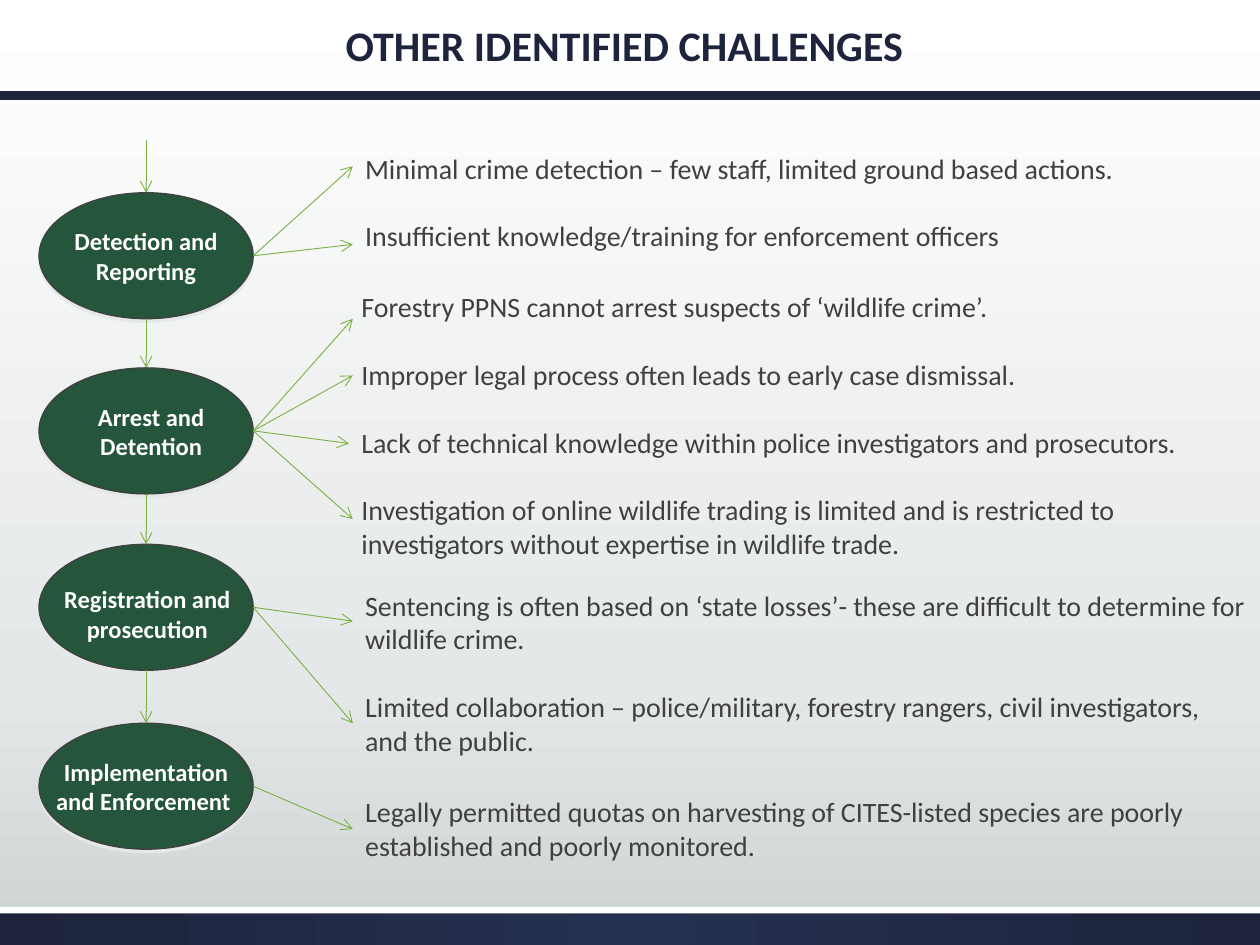
from lxml.etree import SubElement
from pptx import Presentation
from pptx.dml.color import RGBColor
from pptx.enum.shapes import MSO_CONNECTOR, MSO_SHAPE
from pptx.enum.text import MSO_ANCHOR, MSO_AUTO_SIZE, PP_ALIGN
from pptx.oxml import parse_xml
from pptx.oxml.ns import nsdecls, qn
from pptx.util import Inches, Pt

THEME = {
    "font": "Calibri",
    "navy": RGBColor(0x1D, 0x24, 0x3C),
    "gray": RGBColor(0x40, 0x40, 0x40),
    "white": RGBColor(0xFF, 0xFF, 0xFF),
    "green": RGBColor(0x25, 0x55, 0x3B),
    "lime": RGBColor(0x77, 0xB1, 0x42),
    "shade": "E5E8E8",
    "sky": [(0, "FFFFFF"), (72, "E5E8E8"), (100, "CDD2D2")],
    "base": [(0, "263050"), (100, "1D243C")],
    "title": 24, "body": 16, "step": 14,
}

deck = Presentation()
deck.slide_width, deck.slide_height = Inches(10), Inches(7.5)
COL, ROW = deck.slide_width / 100, deck.slide_height / 75
slide = deck.slides.add_slide(deck.slide_layouts[6])
shapes = slide.shapes


def write(box, lines, size, color, bold=False, align=PP_ALIGN.LEFT,
          anchor=MSO_ANCHOR.TOP, inset=None, gap=0):
    """Add a wrapped text box; box is in grid units, gap in points."""
    x, y, w, h = box
    frame = shapes.add_textbox(int(x * COL), int(y * ROW), int(w * COL), int(h * ROW)).text_frame
    frame.word_wrap = True
    frame.auto_size = MSO_AUTO_SIZE.NONE
    frame.vertical_anchor = anchor
    if inset is not None:
        frame.margin_left = frame.margin_right = inset
        frame.margin_top = frame.margin_bottom = inset
    for i, line in enumerate(lines):
        para = frame.paragraphs[0] if i == 0 else frame.add_paragraph()
        para.alignment = align
        if i:
            para.space_before = Pt(gap)
        run = para.add_run()
        run.text = line
        font = run.font
        font.name, font.size, font.bold = THEME["font"], Pt(size), bold
        font.color.rgb = color


def join(start, end, color, width, arrow=True):
    """Draw a straight line between two grid points."""
    (x1, y1), (x2, y2) = start, end
    line = shapes.add_connector(MSO_CONNECTOR.STRAIGHT, int(x1 * COL), int(y1 * ROW),
                                int(x2 * COL), int(y2 * ROW))
    line.line.color.rgb, line.line.width = color, Pt(width)
    if arrow:
        SubElement(line.line._get_or_add_ln(), qn("a:tailEnd"), type="arrow")
    SubElement(line.element.spPr, qn("a:effectLst"))


# Background and footer
slide.background.fill.gradient()
foot = shapes.add_shape(MSO_SHAPE.RECTANGLE, 0, int(72 * ROW), int(100 * COL), int(3 * ROW))
foot.fill.gradient()
strip = shapes.add_shape(MSO_SHAPE.RECTANGLE, 0, int(72 * ROW), int(100 * COL), int(0.5 * ROW))
strip.fill.solid()
strip.fill.fore_color.rgb = THEME["white"]
for bar in (foot, strip):
    bar.shadow.inherit = False
    bar.line.fill.background()

linear = '<a:lin ang="5400000" scaled="0"/>'
radial = '<a:path path="circle"><a:fillToRect l="50000" t="50000" r="50000" b="50000"/></a:path>'
for root, stops, way in ((slide.element.cSld.bg, THEME["sky"], linear),
                         (foot.element, THEME["base"], radial)):
    old = next(root.iter(qn("a:gradFill")))
    marks = "".join(f'<a:gs pos="{at * 1000}"><a:srgbClr val="{tint}"/></a:gs>' for at, tint in stops)
    new = parse_xml(f'<a:gradFill {nsdecls("a")} rotWithShape="1"><a:gsLst>{marks}</a:gsLst>{way}</a:gradFill>')
    old.getparent().replace(old, new)

# Title
join((0, 7.6), (100, 7.6), THEME["navy"], 5, arrow=False)
write((3.3, 1.5, 93.3, 4.5), ["OTHER IDENTIFIED CHALLENGES "], THEME["title"], THEME["navy"],
      bold=True, align=PP_ALIGN.CENTER, anchor=MSO_ANCHOR.BOTTOM)

# Each step: label, oval top, label offset, notes box, notes, arrow ends
LEFT, WIDE, TALL = 3.1, 17, 10
MID, EDGE = LEFT + WIDE / 2, LEFT + WIDE
STEPS = [
    ("Detection and Reporting", 15.3, (0.7, 0.4), (28, 11.5, 64.6, 11.8),
     ["Minimal crime detection – few staff, limited ground based actions.",
      "Insufficient knowledge/training for enforcement officers"],
     [(28, 13.2), (28, 19.4)]),
    ("Arrest and Detention", 29.2, (1.1, 0.4), (27.7, 22.5, 71.1, 25.2),
     ["Forestry PPNS cannot arrest suspects of ‘wildlife crime’.",
      "Improper legal process often leads to early case dismissal.",
      "Lack of technical knowledge within police investigators and prosecutors.",
      "Investigation of online wildlife trading is limited and is restricted to "
      "investigators without expertise in wildlife trade."],
     [(28, 25.3), (28, 29.8), (27.7, 35.2), (28, 41.2)]),
    ("Registration and prosecution", 43.2, (0.8, 0.9), (28, 46.2, 72, 14.5),
     ["Sentencing is often based on ‘state losses’- these are difficult to determine "
      "for wildlife crime.",
      "Limited collaboration – police/military, forestry rangers, civil investigators, "
      "and the public."],
     [(28, 49.3), (28, 57.4)]),
    ("Implementation and Enforcement ", 57.4, (0.7, 0.4), (28, 62.6, 70.9, 6.4),
     ["Legally permitted quotas on harvesting of CITES-listed species are poorly "
      "established and poorly monitored."],
     [(28, 65.8)]),
]

above = 11.1
for label, top, (dx, dy), box, notes, ends in STEPS:
    write(box, notes, THEME["body"], THEME["gray"], gap=19.5)
    oval = shapes.add_shape(MSO_SHAPE.OVAL, int(LEFT * COL), int(top * ROW),
                            int(WIDE * COL), int(TALL * ROW))
    oval.fill.solid()
    oval.fill.fore_color.rgb = THEME["green"]
    oval.line.color.rgb, oval.line.width = THEME["gray"], Pt(0.75)
    oval.shadow.inherit = False
    glow = SubElement(oval.element.spPr.find(qn("a:effectLst")), qn("a:outerShdw"),
                      blurRad="0", dist=str(Pt(2)), dir="5400000", rotWithShape="0")
    SubElement(glow, qn("a:srgbClr"), val=THEME["shade"])
    write((LEFT + dx, top + dy, 15.6, 9.2), [label], THEME["step"], THEME["white"], bold=True,
          align=PP_ALIGN.CENTER, anchor=MSO_ANCHOR.MIDDLE, inset=0)
    join((MID, above), (MID, top), THEME["lime"], 0.5)
    for end in ends:
        join((EDGE, top + TALL / 2), end, THEME["lime"], 0.5)
    above = top + TALL

deck.save("out.pptx")
